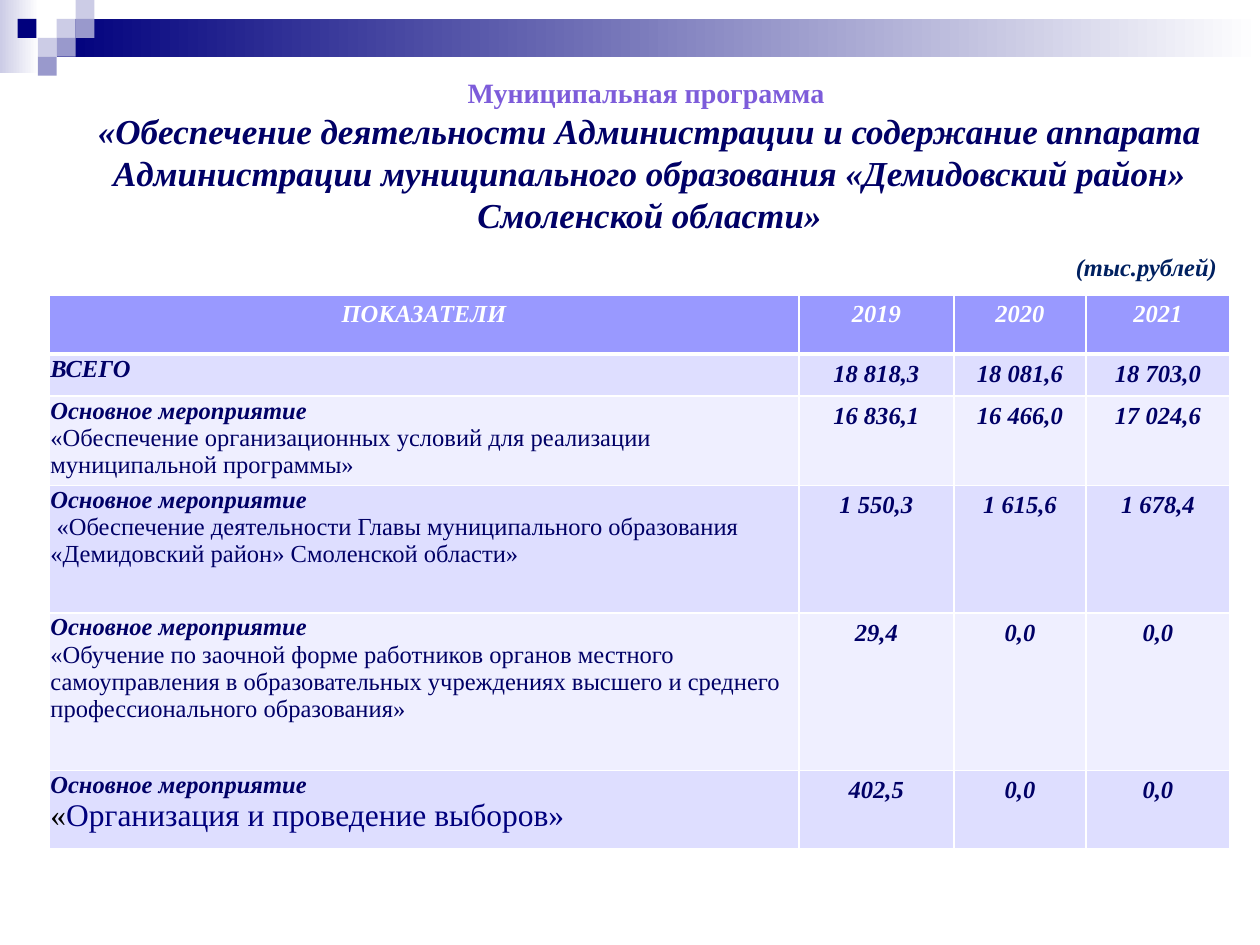
from pptx import Presentation
from pptx import util as u
from pptx.dml.color import RGBColor
from pptx.enum import shapes, text
from pptx.oxml import parse_xml
from pptx.oxml.ns import nsdecls

THEME = {
    "font": "Times New Roman",
    "white": "FFFFFF", "black": "000000", "navy": "00007D", "ink": "000066",
    "violet": "7D5CDA", "unit": "002060", "head": "9999FF",
    "odd": "DEDEFF", "even": "EFEFFF", "pale": "CCCCE6", "mid": "9999CC",
    "small": 14, "label": 16, "large": 18, "title": 20,
}

WIDE, HIGH = 10, 7.5
STEP = 0.15
BARS = [((0, 0, 0.31, 0.58), "pale"), ((0.45, 0.15, 9.55, 0.3), "navy")]
TILES = [(3, 1, "pale"), (4, 0, "pale"), (4, 1, "mid"), (2, 2, "pale"),
         (0.93, 1, "navy"), (3, 2, "mid"), (2, 3, "mid")]

BOLD = ("small", "ink", True, True)
PLAIN = ("small", "ink", False, False)
HEAD = ("small", "white", True, True)

TITLE = [
    [("Муниципальная программа ", ("label", "violet", True, False))],
    [("«Обеспечение деятельности Администрации и содержание аппарата "
      "Администрации муниципального образования «Демидовский район» "
      "Смоленской области»", ("title", "ink", True, True))],
]
UNIT = [[("(тыс.рублей)", ("small", "unit", True, True))]]

TASK = [("Основное мероприятие", BOLD)]
HEADS = ["ПОКАЗАТЕЛИ", "2019", "2020", "2021"]
ROWS = [
    ([[("ВСЕГО", BOLD)]], ["18 818,3", "18 081,6", "18 703,0"]),
    ([TASK, [("«Обеспечение организационных условий для реализации "
              "муниципальной программы»", PLAIN)]],
     ["16 836,1", "16 466,0", "17 024,6"]),
    ([TASK, [(" «Обеспечение деятельности Главы муниципального образования "
              "«Демидовский район» Смоленской области»", PLAIN)]],
     ["1 550,3", "1 615,6", "1 678,4"]),
    ([TASK, [("«Обучение по заочной форме работников органов местного "
              "самоуправления в образовательных учреждениях высшего и среднего "
              "профессионального образования»", PLAIN)]],
     ["29,4", "0,0", "0,0"]),
    ([TASK, [("«", ("large", "black", False, False)),
             ("Организация и проведение выборов»",
              ("large", "navy", False, False))]],
     ["402,5", "0,0", "0,0"]),
]
COLS = [5.95, 1.23, 1.05, 1.14]
TALL = [0.47, 0.33, 0.71, 1.01, 1.25, 0.62]


def tint(name):
    return RGBColor.from_string(THEME[name])


def inches(box):
    return [u.Inches(v) for v in box]


def write(frame, paras, align):
    for i, runs in enumerate(paras):
        para = frame.paragraphs[0] if i == 0 else frame.add_paragraph()
        para.alignment = align
        for words, (size, color, bold, slant) in runs:
            run = para.add_run()
            run.text = words
            font = run.font
            font.name, font.size = THEME["font"], u.Pt(THEME[size])
            font.bold, font.italic = bold, slant
            font.color.rgb = tint(color)


def block(slide, box, color, fade=False):
    shape = slide.shapes.add_shape(shapes.MSO_SHAPE.RECTANGLE, *inches(box))
    shape.shadow.inherit = False
    shape.line.fill.background()
    if fade:
        shape.fill.gradient()
        shape.fill.gradient_angle = 0
        for i, name in enumerate((color, "white")):
            stop = shape.fill.gradient_stops[i]
            stop.position, stop.color.rgb = i, tint(name)
    else:
        shape.fill.solid()
        shape.fill.fore_color.rgb = tint(color)


def label(slide, box, paras, align, wrap):
    frame = slide.shapes.add_textbox(*inches(box)).text_frame
    frame.word_wrap = wrap
    write(frame, paras, align)


def edge(cell, foot):
    props = cell._tc.get_or_add_tcPr()
    for i, (side, size) in enumerate(zip("LRTB", (1, 1, 1, foot))):
        props.insert(i, parse_xml(
            f'<a:ln{side} {nsdecls("a")} w="{u.Pt(size)}"><a:solidFill>'
            f'<a:srgbClr val="{THEME["white"]}"/></a:solidFill></a:ln{side}>'))


def grid(slide):
    box = (0.39, 2.34, sum(COLS), sum(TALL))
    table = slide.shapes.add_table(len(TALL), len(COLS), *inches(box)).table
    for col, wide in zip(table.columns, COLS):
        col.width = u.Inches(wide)
    for row, high in zip(table.rows, TALL):
        row.height = u.Inches(high)
    mid, left = text.PP_ALIGN.CENTER, text.PP_ALIGN.LEFT
    lines = [[[[(word, HEAD)]] for word in HEADS]]
    lines += [[name] + [[[(n, BOLD)]] for n in nums] for name, nums in ROWS]
    for r, line in enumerate(lines):
        shade = "head" if r == 0 else ("even", "odd")[r % 2]
        for c, paras in enumerate(line):
            cell = table.cell(r, c)
            cell.fill.solid()
            cell.fill.fore_color.rgb = tint(shade)
            edge(cell, 3 if r == 0 else 1)
            name = r > 0 and c == 0
            if name:
                cell.margin_left = cell.margin_right = u.Inches(0.01)
                cell.margin_top, cell.margin_bottom = u.Inches(0.01), 0
            write(cell.text_frame, paras, left if name else mid)


def main():
    deck = Presentation()
    deck.slide_width, deck.slide_height = inches((WIDE, HIGH))
    slide = deck.slides.add_slide(deck.slide_layouts[6])
    for box, color in BARS:
        block(slide, box, color, True)
    for col, row, color in TILES:
        block(slide, (col * STEP, row * STEP, STEP, STEP), color)
    label(slide, (0.31, 0.55, 9.69, 1.38), TITLE, text.PP_ALIGN.CENTER, True)
    grid(slide)
    label(slide, (8.44, 1.95, 1.33, 0.34), UNIT, text.PP_ALIGN.LEFT, False)
    deck.save("out.pptx")


if __name__ == "__main__":
    main()
